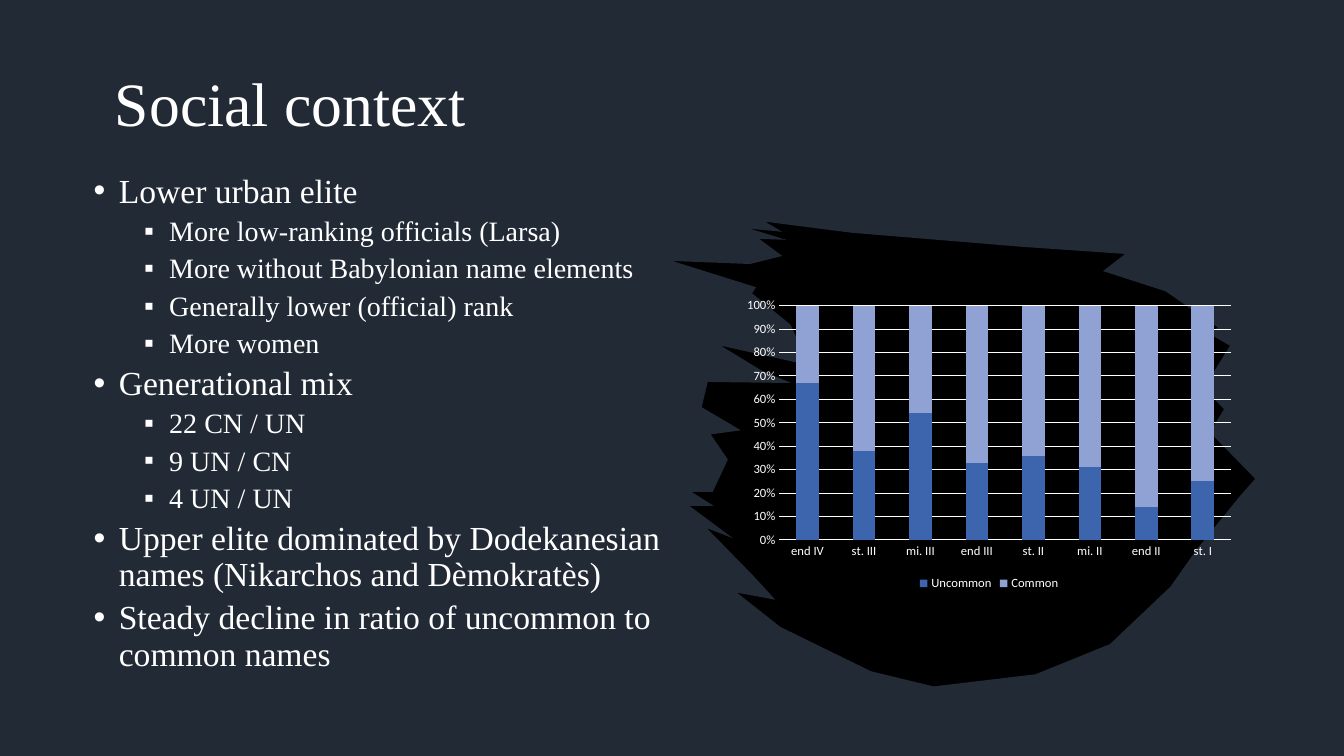
import dataclasses

import lxml.etree
import pptx
import pptx.chart.data
import pptx.dml.color
import pptx.enum.chart
import pptx.enum.text
import pptx.oxml.ns
import pptx.util

EMU_PER_PX = 9144  # 100 px to the inch
SLIDE_WIDTH, SLIDE_HEIGHT = 1333, 750


@dataclasses.dataclass(frozen=True)
class Theme:
    background: str = "000000"
    overlay: str = "44546A"
    overlay_alpha: int = 50
    text: str = "FFFFFF"
    uncommon: str = "3C65AE"
    common: str = "90A2D3"
    text_font: str = "Times New Roman"
    chart_font: str = "Calibri"
    title_size: int = 44
    topic_size: int = 24
    detail_size: int = 20
    chart_size: int = 9
    line_width: float = 0.75


THEME = Theme()

TOPICS = [
    ("Lower urban elite", [
        "More low-ranking officials (Larsa)",
        "More without Babylonian name elements",
        "Generally lower (official) rank",
        "More women",
    ]),
    ("Generational mix", ["22 CN / UN", "9 UN / CN", "4 UN / UN"]),
    ("Upper elite dominated by Dodekanesian names (Nikarchos and Dèmokratès)", []),
    ("Steady decline in ratio of uncommon to common names", []),
]

PERIODS = ["end IV", "st. III", "mi. III", "end III", "st. II", "mi. II", "end II", "st. I"]
UNCOMMON_SHARES = [67, 38, 54, 33, 36, 31, 14, 25]
NAME_SHARES = [
    ("Uncommon", THEME.uncommon, UNCOMMON_SHARES),
    ("Common", THEME.common, [100 - share for share in UNCOMMON_SHARES]),
]

BRUSH_OUTLINE = [
    (759, 220), (776, 230), (744, 227), (780, 238), (753, 237), (776, 254), (744, 262),
    (667, 259), (750, 285), (746, 291), (784, 322), (797, 350), (796, 361), (715, 343),
    (756, 368), (785, 380), (702, 379), (696, 404), (735, 427), (705, 431), (722, 456),
    (707, 488), (686, 488), (708, 502), (684, 502), (727, 534), (701, 524), (747, 571),
    (769, 595), (731, 588), (774, 622), (864, 666), (926, 681), (1027, 669), (1101, 639),
    (1161, 582), (1187, 545), (1230, 492), (1245, 475), (1200, 429), (1214, 406),
    (1194, 385), (1220, 343), (1199, 331), (1208, 325), (1156, 289), (1094, 269),
    (1116, 252), (1015, 245), (845, 231),
]


def px(length):
    return pptx.util.Emu(length * EMU_PER_PX)


def color(value):
    return pptx.dml.color.RGBColor.from_string(value)


def paint(fill, value):
    fill.solid()
    fill.fore_color.rgb = color(value)


def style_font(font, name, size):
    font.name = name
    font.size = pptx.util.Pt(size)
    font.color.rgb = color(THEME.text)


def add_brush_mask(slide):
    """Cover the slide with a translucent layer that leaves the brush stroke open."""
    builder = slide.shapes.build_freeform(*BRUSH_OUTLINE[0], scale=EMU_PER_PX)
    builder.add_line_segments(BRUSH_OUTLINE[1:])
    builder.move_to(0, 0)
    builder.add_line_segments([(SLIDE_WIDTH, 0), (SLIDE_WIDTH, SLIDE_HEIGHT), (0, SLIDE_HEIGHT)])
    mask = builder.convert_to_shape()
    mask.shadow.inherit = False
    mask.line.fill.background()
    paint(mask.fill, THEME.overlay)
    tint = mask.element.spPr.find(".//" + pptx.oxml.ns.qn("a:srgbClr"))
    alpha = lxml.etree.SubElement(tint, pptx.oxml.ns.qn("a:alpha"))
    alpha.set("val", str(THEME.overlay_alpha * 1000))
    slide.shapes.title.element.addprevious(mask.element)


def add_title(slide, text):
    title = slide.shapes.title
    title.left, title.top, title.width, title.height = map(px, (104, 33, 1150, 145))
    frame = title.text_frame
    frame.text = text
    frame.vertical_anchor = pptx.enum.text.MSO_ANCHOR.MIDDLE
    heading = frame.paragraphs[0]
    heading.alignment = pptx.enum.text.PP_ALIGN.LEFT
    heading.line_spacing = 0.9
    style_font(heading.runs[0].font, THEME.text_font, THEME.title_size)


def format_bullet(paragraph, mark, indent, size, space_before):
    properties = paragraph._p.get_or_add_pPr()
    properties.set("marL", str(px(indent)))
    properties.set("indent", str(px(-25)))
    bullet_font = lxml.etree.SubElement(properties, pptx.oxml.ns.qn("a:buFont"))
    bullet_font.set("typeface", "Arial")
    bullet = lxml.etree.SubElement(properties, pptx.oxml.ns.qn("a:buChar"))
    bullet.set("char", mark)
    paragraph.line_spacing = 0.9
    paragraph.space_before = pptx.util.Pt(space_before)
    style_font(paragraph.runs[0].font, THEME.text_font, size)


def add_topics(slide):
    frame = slide.shapes.add_textbox(px(83), px(168), px(661), px(545)).text_frame
    frame.word_wrap = True
    lines = []
    for topic, details in TOPICS:
        lines.append((topic, "•", 25, THEME.topic_size))
        lines += [(detail, "▪", 75, THEME.detail_size) for detail in details]
    frame.text = "\n".join(line[0] for line in lines)
    for index, (paragraph, line) in enumerate(zip(frame.paragraphs, lines)):
        format_bullet(paragraph, *line[1:], space_before=5 if index else 0)


def style_line(line):
    paint(line.fill, THEME.text)
    line.width = pptx.util.Pt(THEME.line_width)


def add_shares_chart(slide):
    shares = pptx.chart.data.CategoryChartData()
    shares.categories = PERIODS
    for name, _, values in NAME_SHARES:
        shares.add_series(name, values)
    chart = slide.shapes.add_chart(
        pptx.enum.chart.XL_CHART_TYPE.COLUMN_STACKED_100,
        px(731), px(290), px(500), px(300), shares).chart
    style_font(chart.font, THEME.chart_font, THEME.chart_size)
    chart.has_title = False
    chart.has_legend = True
    chart.legend.position = pptx.enum.chart.XL_LEGEND_POSITION.BOTTOM
    chart.legend.include_in_layout = False
    style_font(chart.legend.font, THEME.chart_font, THEME.chart_size)

    columns = chart.plots[0]
    columns.gap_width, columns.overlap = 150, 100
    columns.vary_by_categories = False
    for series, (_, fill, _) in zip(columns.series, NAME_SHARES):
        paint(series.format.fill, fill)

    periods, percentages = chart.category_axis, chart.value_axis
    for axis in (periods, percentages):
        axis.major_tick_mark = axis.minor_tick_mark = pptx.enum.chart.XL_TICK_MARK.NONE
        style_font(axis.tick_labels.font, THEME.chart_font, THEME.chart_size)
    style_line(periods.format.line)
    percentages.format.line.fill.background()
    percentages.has_major_gridlines = True
    style_line(percentages.major_gridlines.format.line)
    percentages.tick_labels.number_format = "0%"
    percentages.tick_labels.number_format_is_linked = False


def main():
    deck = pptx.Presentation()
    deck.slide_width, deck.slide_height = px(SLIDE_WIDTH), px(SLIDE_HEIGHT)
    slide = deck.slides.add_slide(deck.slide_layouts.get_by_name("Title Only"))
    paint(slide.background.fill, THEME.background)
    add_brush_mask(slide)
    add_title(slide, "Social context")
    add_topics(slide)
    add_shares_chart(slide)
    deck.save("out.pptx")


if __name__ == "__main__":
    main()
